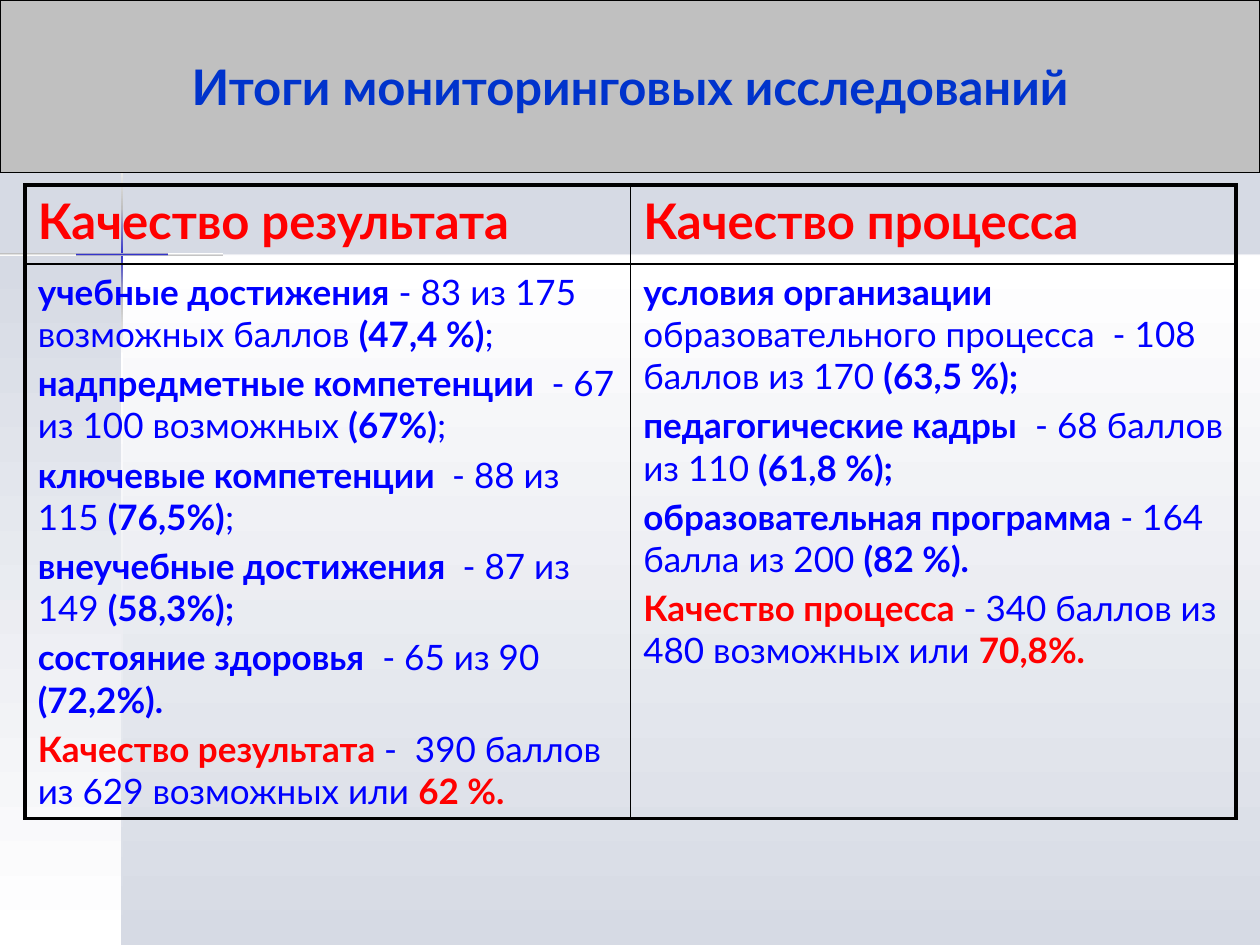
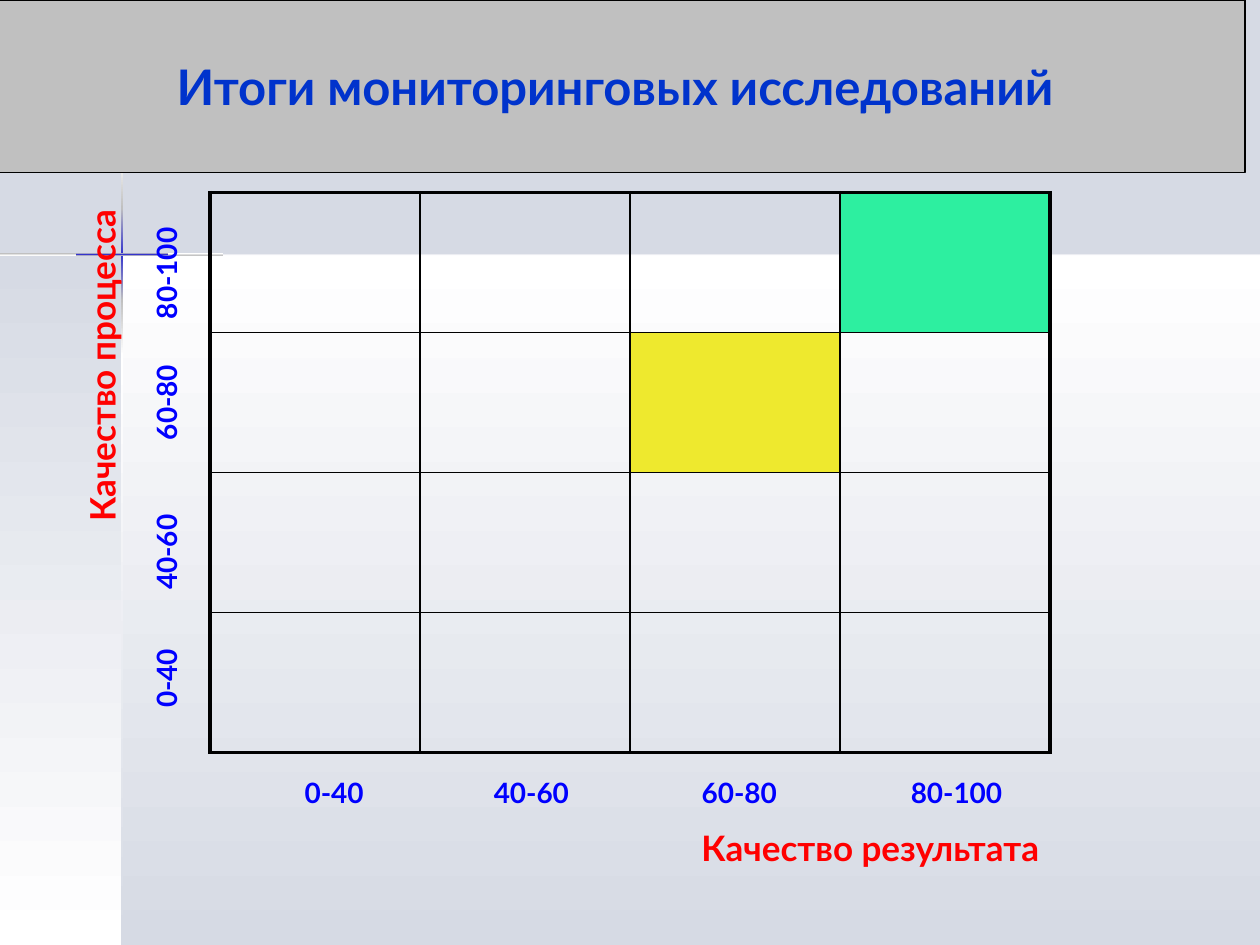
from copy import deepcopy
from typing import NamedTuple

from lxml.etree import SubElement
from pptx import Presentation
from pptx.dml.color import RGBColor
from pptx.enum.shapes import MSO_SHAPE as Shape
from pptx.enum.text import MSO_ANCHOR as Anchor, MSO_AUTO_SIZE as AutoSize, PP_ALIGN as Align
from pptx.oxml.ns import qn
from pptx.util import Pt

FONT = "Lato"
PALE = RGBColor(0xD6, 0xDA, 0xE4)
WHITE = RGBColor(0xFF, 0xFF, 0xFF)
GREY = RGBColor(0xC0, 0xC0, 0xC0)
INDIGO = RGBColor(0x33, 0x33, 0xCC)
BLACK = RGBColor(0x00, 0x00, 0x00)
TITLE_BLUE = RGBColor(0x00, 0x33, 0xCC)
BLUE = RGBColor(0x00, 0x00, 0xFF)
RED = RGBColor(0xFF, 0x00, 0x00)
GREEN = RGBColor(0x2D, 0xEF, 0xA0)
YELLOW = RGBColor(0xEE, 0xE9, 0x2E)

SLIDE_W, SLIDE_H = 720, 540
TITLE = "Итоги мониторинговых исследований"
OUTER, INNER = 2.25, 1
CROSS_X, CROSS_Y, HAIR = 69.1, 144.7, 1.44


class Band(NamedTuple):
    """A borderless rectangle with a gradient from left to right or downwards."""
    left: float
    top: float
    width: float
    height: float
    colors: tuple[RGBColor, ...]
    vertical: bool


class Item(NamedTuple):
    """One indicator: bold name, plain detail, bold score, plain ending."""
    name: str
    detail: str
    score: str
    ending: str = ""
    accent: RGBColor = BLUE


class Label(NamedTuple):
    text: str
    center_x: float
    center_y: float
    width: float
    height: float
    size: float
    color: RGBColor
    rotation: int = 0


def across(start: float, end: float, *colors: RGBColor) -> Band:
    return Band(start, CROSS_Y, end - start, HAIR, colors, False)


def down(start: float, end: float, *colors: RGBColor) -> Band:
    return Band(CROSS_X, start, HAIR, end - start, colors, True)


PANEL_X, PANEL_Y = 69.8, 145.4
BANDS = [
    Band(PANEL_X, PANEL_Y, SLIDE_W - PANEL_X, SLIDE_H - PANEL_Y, (PALE, WHITE), False),
    Band(0, PANEL_Y, PANEL_X, SLIDE_H - PANEL_Y, (PALE, WHITE), True),
    down(0.7, 87, PALE, WHITE),
    down(87, 119, WHITE, GREY),
    down(119, 171.4, GREY, INDIGO, GREY),
    down(171.4, 203, GREY, WHITE),
    down(203, SLIDE_H, WHITE, PALE),
    across(0, 43.5, WHITE, GREY),
    across(43.5, 96, GREY, INDIGO, GREY),
    across(96, 127.4, GREY, WHITE),
    across(127.4, SLIDE_W, WHITE, PALE),
]

RESULT_HEADING, PROCESS_HEADING = "Качество результата", "Качество процесса"
INDICATORS = {
    RESULT_HEADING: [
        Item("учебные достижения", " - 83 из 175 возможных баллов ", "(47,4 %)", ";"),
        Item("надпредметные компетенции  ", "- 67 из 100 возможных ", "(67%)", ";"),
        Item("ключевые компетенции  ", "- 88 из 115 ", "(76,5%)", ";"),
        Item("внеучебные достижения  ", "- 87 из 149 ", "(58,3%);"),
        Item("состояние здоровья", "  - 65 из 90 ", "(72,2%)."),
        Item("Качество результата ", "-  390 баллов из 629 возможных или ", "62 %.", accent=RED),
    ],
    PROCESS_HEADING: [
        Item("условия организации ", "образовательного процесса  - 108 баллов из 170 ", "(63,5 %);"),
        Item("педагогические кадры", "  - 68 баллов из 110 ", "(61,8 %);"),
        Item("образовательная программа ", "- 164 балла из 200 ", "(82 %)."),
        Item("Качество процесса ", "- 340 баллов из 480 возможных или ", "70,8%.", accent=RED),
    ],
}

RANGE_WIDTHS = {"0-40": 52, "40-60": 62.6, "60-80": 62.6, "80-100": 72.7}
RESULT_CENTERS = (193, 306.4, 425.2, 549.7)
PROCESS_CENTERS = (385.6, 312.8, 227.2, 153)
LABELS = [
    Label(PROCESS_HEADING, 58, 202.7, 205.2, 31, 20, RED, 270),
    Label(RESULT_HEADING, 505.4, 484.2, 223.2, 31, 20, RED),
]
for (scale, w), x, y in zip(RANGE_WIDTHS.items(), RESULT_CENTERS, PROCESS_CENTERS):
    LABELS.append(Label(scale, x, 453.2, w, 26.6, 16, BLUE))
    LABELS.append(Label(scale, 95, y, w, 26.6, 16, BLUE, 270))


def add_run(p, text: str, size: float, color: RGBColor, bold: bool = True) -> None:
    r = p.add_run()
    r.text = text
    r.font.name, r.font.size, r.font.bold = FONT, Pt(size), bold
    r.font.color.rgb = color


def add_band(shapes, band: Band) -> None:
    s = shapes.add_shape(Shape.RECTANGLE, Pt(band.left), Pt(band.top), Pt(band.width), Pt(band.height))
    s.shadow.inherit = False
    s.line.fill.background()
    s.fill.gradient()
    if band.vertical:
        s.fill.gradient_angle = 270
    if len(band.colors) == 3:
        first = next(s.element.iter(qn("a:gs")))
        first.addnext(deepcopy(first))
    for i, (stop, color) in enumerate(zip(s.fill.gradient_stops, band.colors)):
        stop.color.rgb = color
        stop.position = i / (len(band.colors) - 1)


def decorate_master(prs, slide) -> None:
    """Draw the backdrop in a group on the slide, then move it to the master."""
    master = prs.slide_master
    master.background.fill.solid()
    master.background.fill.fore_color.rgb = PALE
    group = slide.shapes.add_group_shape()
    for band in BANDS:
        add_band(group.shapes, band)
    for number, props in enumerate(group.element.iter(qn("p:cNvPr")), start=100):
        props.set("id", str(number))
    master.shapes.element.insert(2, group.element)


def set_title(slide, left: float) -> None:
    s = slide.shapes.title
    s.left, s.top, s.width, s.height = Pt(left), Pt(0), Pt(SLIDE_W), Pt(98.6)
    s.fill.solid()
    s.fill.fore_color.rgb = GREY
    s.line.color.rgb = BLACK
    s.line.width = Pt(0.75)
    tf = s.text_frame
    tf.word_wrap, tf.auto_size, tf.vertical_anchor = False, AutoSize.NONE, Anchor.MIDDLE
    p = tf.paragraphs[0]
    p.alignment = Align.CENTER
    add_run(p, TITLE, 28, TITLE_BLUE)


def set_borders(cell, widths: dict[str, float]) -> None:
    props = cell._tc.get_or_add_tcPr()
    for side, width in widths.items():
        line = SubElement(props, qn(f"a:ln{side}"), w=str(Pt(width)))
        fill = SubElement(line, qn("a:solidFill"))
        SubElement(fill, qn("a:srgbClr"), val=str(BLACK))


def add_grid(slide, left: float, top: float, col_widths: list[float], row_heights: list[float]):
    """Add an unfilled table with a thick frame and thin inner lines."""
    rows, cols = len(row_heights), len(col_widths)
    table = slide.shapes.add_table(rows, cols, Pt(left), Pt(top),
                                   Pt(sum(col_widths)), Pt(sum(row_heights))).table
    table.first_row = table.horz_banding = False
    for column, width in zip(table.columns, col_widths):
        column.width = Pt(width)
    for i, height in enumerate(row_heights):
        table.rows[i].height = Pt(height)
        for j in range(cols):
            cell = table.cell(i, j)
            set_borders(cell, {
                "L": INNER if j else OUTER,
                "R": INNER if j < cols - 1 else OUTER,
                "T": INNER if i else OUTER,
                "B": INNER if i < rows - 1 else OUTER,
            })
            cell.fill.background()
    return table


def fill_indicators(table) -> None:
    for j, (heading, items) in enumerate(INDICATORS.items()):
        p = table.cell(0, j).text_frame.paragraphs[0]
        p.space_before = Pt(5.6)
        add_run(p, heading, 28, RED)
        tf = table.cell(1, j).text_frame
        for i, item in enumerate(items):
            p = tf.add_paragraph() if i else tf.paragraphs[0]
            p.space_before = Pt(4)
            add_run(p, item.name, 20, item.accent)
            add_run(p, item.detail, 20, BLUE, bold=False)
            add_run(p, item.score, 20, item.accent)
            if item.ending:
                add_run(p, item.ending, 20, BLUE, bold=False)


def add_label(slide, label: Label) -> None:
    s = slide.shapes.add_textbox(Pt(label.center_x - label.width / 2), Pt(label.center_y - label.height / 2),
                                 Pt(label.width), Pt(label.height))
    s.rotation = label.rotation
    tf = s.text_frame
    tf.word_wrap, tf.auto_size = False, AutoSize.SHAPE_TO_FIT_TEXT
    add_run(tf.paragraphs[0], label.text, label.size, label.color)


def main() -> None:
    prs = Presentation()
    prs.slide_width, prs.slide_height = Pt(SLIDE_W), Pt(SLIDE_H)
    title_only = prs.slide_layouts[5]

    summary = prs.slides.add_slide(title_only)
    decorate_master(prs, summary)
    set_title(summary, 0)
    fill_indicators(add_grid(summary, 14.4, 105.8, [346, 346], [45.2, 316.8]))

    matrix = prs.slides.add_slide(title_only)
    set_title(matrix, -8.6)
    table = add_grid(matrix, 120, 110, [120] * 4, [80] * 4)
    for row, col, color in ((0, 3, GREEN), (1, 2, YELLOW)):
        fill = table.cell(row, col).fill
        fill.solid()
        fill.fore_color.rgb = color
    for label in LABELS:
        add_label(matrix, label)

    prs.save("out.pptx")


if __name__ == "__main__":
    main()
